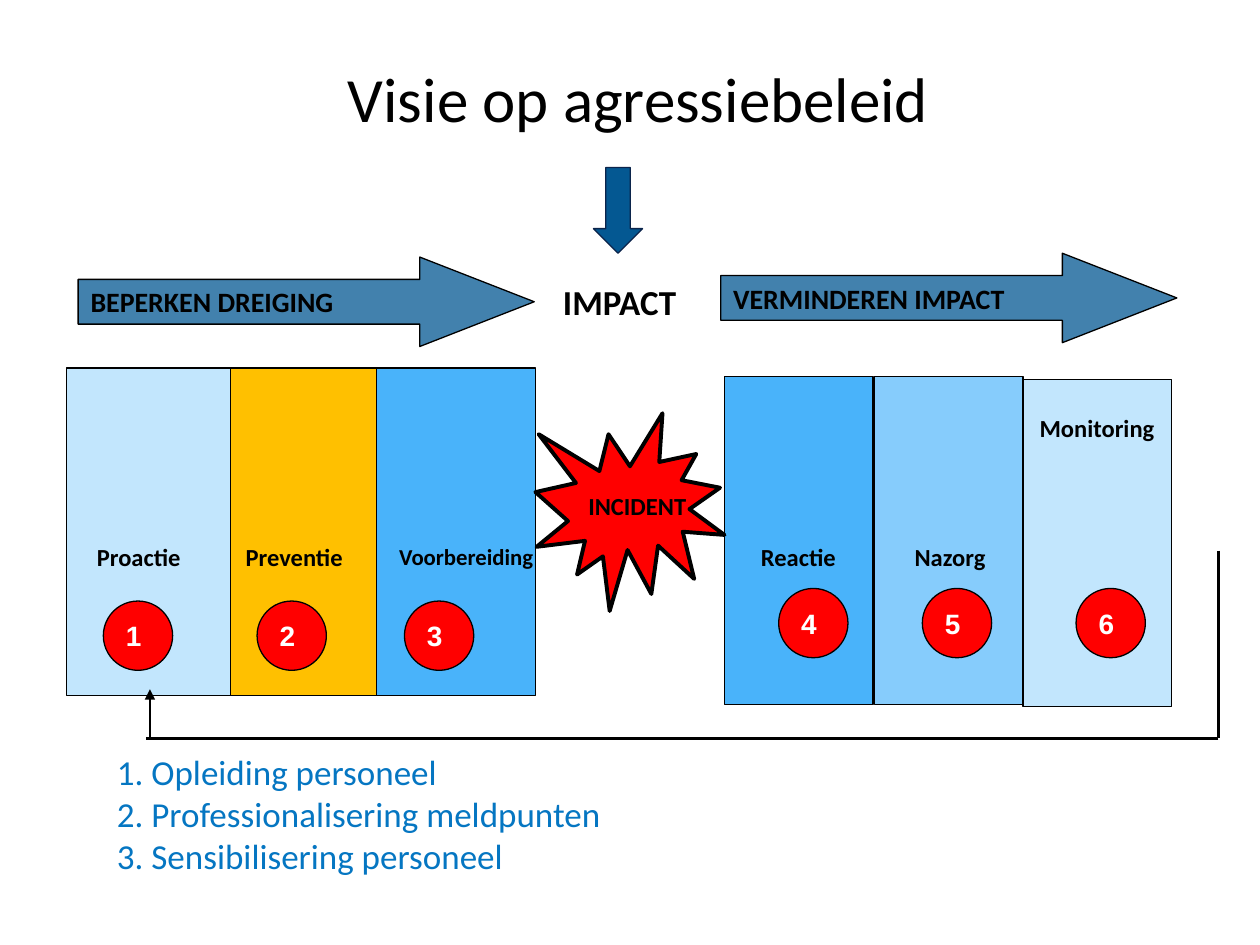
from pptx import Presentation
from pptx.dml.color import RGBColor
from pptx.enum.shapes import MSO_SHAPE as Geo, MSO_CONNECTOR as Link
from pptx.enum.text import MSO_ANCHOR as Anchor, PP_ALIGN as Align
from pptx.oxml.ns import qn
from pptx.util import Inches, Pt
from lxml.etree import SubElement as Sub

THEME = dict(
    black="000000", white="FFFFFF", red="FF0000", gold="FFC000", pale="C2E6FD",
    light="86CCFC", sky="49B3FA", navy="045892", edge="0B244B", link="0576C2",
    body="Calibri", digit="Arial",
    title=36, big=20, arrow=16, label=14, small=13, thin=0.75, rule=1.5, bold=2.25,
)

PANELS = [
    (0.53, 2.92, 1.3, "pale"), (1.83, 2.92, 1.18, "gold"), (2.99, 2.92, 1.26, "sky"),
    (5.75, 2.99, 1.18, "sky"), (6.94, 2.99, 1.18, "light"), (8.12, 3.01, 1.18, "pale"),
]
LABELS = [
    ("Proactie", 0.67, 1.02, "pale", "label"),
    ("Preventie", 1.85, 1.02, "gold", "label"),
    ("Voorbereiding", 3.07, 0.94, "sky", "small"),
    ("Reactie", 5.94, 0.89, "sky", "label"),
    ("Nazorg", 7.16, 0.75, "light", "label"),
]
LAST = "Monitoring"
DOTS = [(0.82, 4.77), (2.04, 4.77), (3.21, 4.77), (6.18, 4.67), (7.32, 4.67), (8.54, 4.67)]
ARROWS = [("BEPERKEN DREIGING", 0.62, 2.04), ("VERMINDEREN IMPACT", 5.72, 2.01)]
LOOP = [(9.67, 4.37), (9.67, 5.86), (1.16, 5.86)]
RISE = [(1.19, 5.86), (1.19, 5.47)]
STEPS = ["1. Opleiding personeel", "2. Professionalisering meldpunten", "3. Sensibilisering personeel"]


def tint(name):
    return RGBColor.from_string(THEME[name])


def write(shape, lines, size, color="black", font="body", bold=True,
          align=Align.LEFT, anchor=Anchor.MIDDLE, wrap=False, left=0.1, top=0.05):
    frame = shape.text_frame
    frame.word_wrap = wrap
    frame.vertical_anchor = anchor
    frame.margin_left, frame.margin_top = Inches(left), Inches(top)
    for i, line in enumerate(lines):
        para = frame.paragraphs[0] if i == 0 else frame.add_paragraph()
        para.alignment = align
        run = para.add_run()
        run.text = line
        run.font.name, run.font.size = THEME[font], Pt(THEME[size])
        run.font.bold = bold
        run.font.color.rgb = tint(color)


def draw(geo, box, fill, line=None, width="thin"):
    shape = slide.shapes.add_shape(geo, *map(Inches, box))
    shape.shadow.inherit = False
    shape.fill.solid()
    shape.fill.fore_color.rgb = tint(fill)
    if line:
        shape.line.color.rgb = tint(line)
        shape.line.width = Pt(THEME[width])
    else:
        shape.line.fill.background()
    return shape


def join(start, end, head=False):
    link = slide.shapes.add_connector(Link.STRAIGHT, *map(Inches, start + end))
    link.line.color.rgb = tint("black")
    link.line.width = Pt(THEME["rule"])
    if head:
        Sub(link.line._get_or_add_ln(), qn("a:tailEnd"), type="triangle")
    Sub(link._element.spPr, qn("a:effectLst"))


deck = Presentation()
deck.slide_width, deck.slide_height = Inches(10), Inches(7.5)
slide = deck.slides.add_slide(deck.slide_layouts[6])

for x, y, wide, fill in PANELS:
    panel = draw(Geo.RECTANGLE, (x, y, wide, 2.6), fill, "black")
write(panel, [LAST], "label", anchor=Anchor.TOP, left=0.13, top=0.27)

burst = draw(Geo.EXPLOSION1, (4.25, 3.28, 1.5, 1.57), "red", "black", "bold")
write(burst, ["INCIDENT"], "label")

for name, x, wide, fill, size in LABELS:
    write(draw(Geo.RECTANGLE, (x, 4.22, wide, 0.39), fill), [name], size)

for num, (x, y) in enumerate(DOTS, 1):
    dot = draw(Geo.OVAL, (x, y, 0.55, 0.55), "red", "black")
    write(dot, [str(num)], "arrow", "white", "digit")

for name, x, y in ARROWS:
    arrow = draw(Geo.RIGHT_ARROW, (x, y, 3.62, 0.71), "navy", "black")
    arrow.adjustments[0], arrow.adjustments[1] = 0.5, 1.28
    paint = arrow._element.spPr.find(qn("a:solidFill"))
    Sub(paint[0], qn("a:alpha"), val="75000")
    write(arrow, [name], "arrow")

write(draw(Geo.RECTANGLE, (4.37, 1.8, 1.26, 1.18), "white"), ["IMPACT"], "big")

for start, end in zip(LOOP, LOOP[1:]):
    join(start, end)
join(*RISE, head=True)

title = slide.shapes.add_textbox(*map(Inches, (2.36, 0.42, 5.41, 0.71)))
write(title, ["Visie op agressiebeleid"], "title", bold=False,
      align=Align.CENTER, anchor=Anchor.TOP, wrap=True)

draw(Geo.DOWN_ARROW, (4.71, 1.33, 0.39, 0.68), "navy", "edge")

steps = draw(Geo.RECTANGLE, (0.83, 5.91, 4.03, 1.02), "white")
write(steps, STEPS, "big", "link", bold=False, anchor=Anchor.TOP)

deck.save("out.pptx")
